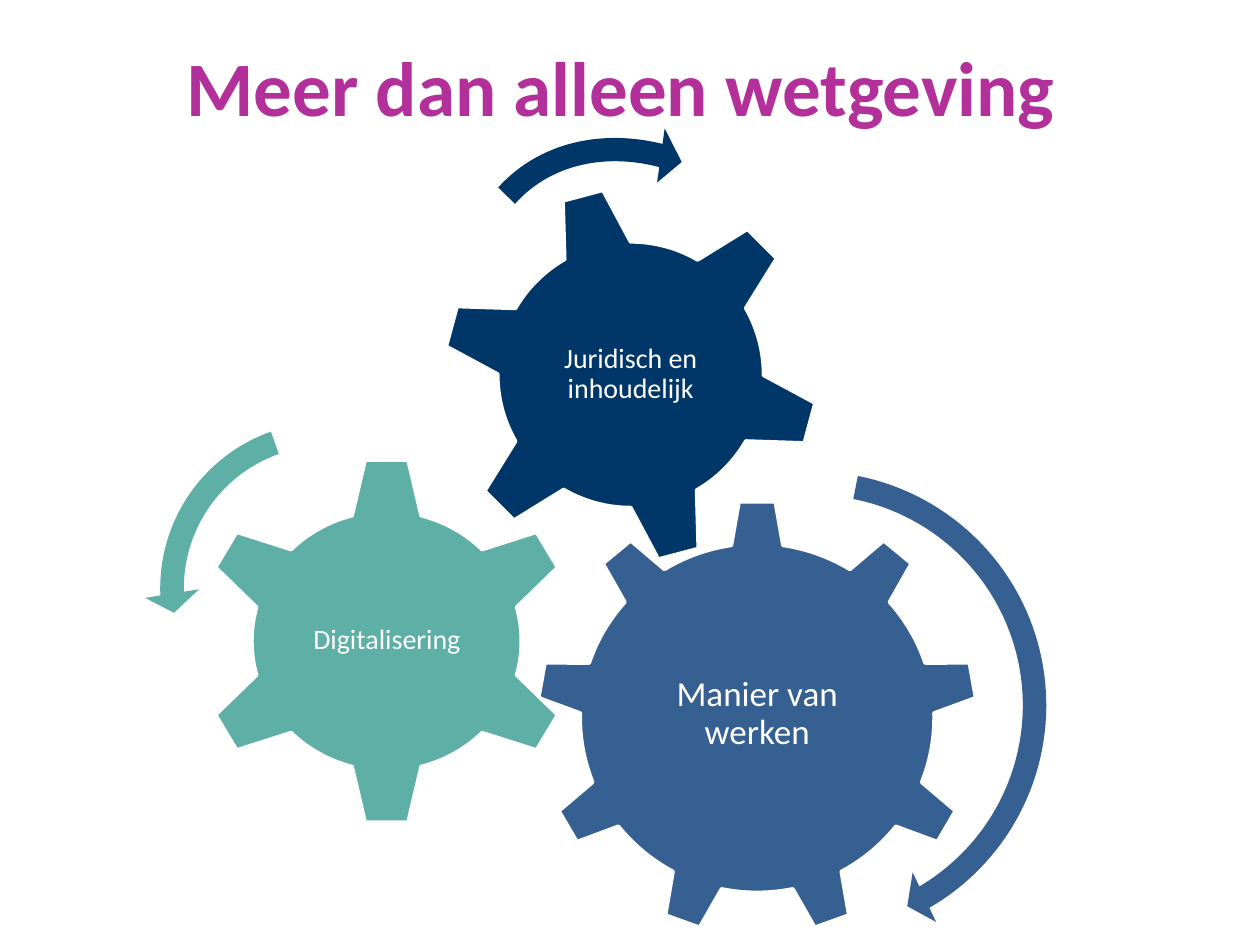
import dataclasses

import pptx
import pptx.dml.color
import pptx.enum.shapes
import pptx.enum.text
import pptx.util

Cm = pptx.util.Cm
Pt = pptx.util.Pt
PRESETS = pptx.enum.shapes.MSO_SHAPE
FONT = "Calibri"
COLOURS = {
    "title": "B32F9A",
    "blue": "376092",
    "teal": "5EAFA6",
    "navy": "003768",
    "white": "FFFFFF",
}


@dataclasses.dataclass
class Gear:
    """Boxes are (left, top, width, height) in cm; label and arrow boxes start at the gear's corner."""
    text: str
    colour: str
    preset: int
    box: tuple
    rotation: float
    label_box: tuple
    font_size: int
    label_margin: float
    arrow_preset: int
    arrow_box: tuple
    arrow_rotation: float
    arrow_adjustments: tuple


GEARS = [
    Gear("Manier van werken", "blue", PRESETS.GEAR_9, (10.82, 10.08, 8.89, 8.79), 0,
         (1.78, 2.06, 5.33, 4.52), 20, 0.07,
         PRESETS.CIRCULAR_ARROW, (0.53, -0.89, 10.06, 10.06), 17.5,
         (0.047, 2.99, 25.349, 158.214, 0.055)),
    Gear("Digitalisering", "teal", PRESETS.GEAR_6, (3.96, 9.19, 7.67, 7.47), 0,
         (1.91, 1.88, 3.86, 3.68), 16, 0.05,
         PRESETS.LEFT_CIRCULAR_ARROW, (-1.04, -0.99, 7.32, 7.32), 3.2,
         (0.065, 4.3, 104.891, 148.378, 0.075)),
    Gear("Juridisch en inhoudelijk", "navy", PRESETS.GEAR_6, (8.89, 3.73, 7.65, 7.65), 345.1,
         (1.68, 1.68, 4.29, 4.29), 16, 0.05,
         PRESETS.CIRCULAR_ARROW, (-0.46, -0.74, 9.6, 7.87), 49.5,
         (0.06, 3.941, 133.138, 105.082, 0.07)),
]


def colour(name):
    return pptx.dml.color.RGBColor.from_string(COLOURS[name])


def place_within(box, inner):
    """Turn a box measured from another box's corner into slide lengths."""
    left, top, width, height = inner
    return [Cm(length) for length in (box[0] + left, box[1] + top, width, height)]


def write_text(text_frame, text, size, colour_name, bold=False):
    text_frame.word_wrap = True
    text_frame.vertical_anchor = pptx.enum.text.MSO_ANCHOR.MIDDLE
    paragraph = text_frame.paragraphs[0]
    paragraph.alignment = pptx.enum.text.PP_ALIGN.CENTER
    run = paragraph.add_run()
    run.text = text
    run.font.name = FONT
    run.font.size = Pt(size)
    run.font.bold = bold
    run.font.color.rgb = colour(colour_name)
    return paragraph


def add_title(slide, box, text):
    title = slide.shapes.title
    title.left, title.top, title.width, title.height = [Cm(length) for length in box]
    write_text(title.text_frame, text, 44, "title", bold=True)


def add_filled_shape(shapes, preset, position, rotation, colour_name):
    shape = shapes.add_shape(preset, *position)
    shape.shadow.inherit = False
    shape.rotation = rotation
    shape.fill.solid()
    shape.fill.fore_color.rgb = colour(colour_name)
    shape.line.fill.background()
    return shape


def add_gear(shapes, gear):
    left, top, width, height = gear.box
    wheel = add_filled_shape(shapes, gear.preset, place_within((left, top), (0, 0, width, height)),
                             gear.rotation, gear.colour)
    wheel.line.color.rgb = colour("white")
    wheel.line.width = Pt(2)

    label = shapes.add_textbox(*place_within(gear.box, gear.label_box))
    frame = label.text_frame
    frame.margin_left = frame.margin_right = Cm(gear.label_margin)
    frame.margin_top = frame.margin_bottom = Cm(gear.label_margin)
    paragraph = write_text(frame, gear.text, gear.font_size, "white")
    paragraph.line_spacing = 0.9


def add_turning_arrow(shapes, gear):
    arrow = add_filled_shape(shapes, gear.arrow_preset, place_within(gear.box, gear.arrow_box),
                             gear.arrow_rotation, gear.colour)
    for index, value in enumerate(gear.arrow_adjustments):
        arrow.adjustments[index] = value


def add_gear_diagram(slide, gears):
    shapes = slide.shapes.add_group_shape().shapes
    for gear in gears:
        add_gear(shapes, gear)
    for gear in gears:
        add_turning_arrow(shapes, gear)


def main():
    presentation = pptx.Presentation()
    presentation.slide_width = Cm(25.4)
    presentation.slide_height = Cm(19.05)
    slide = presentation.slides.add_slide(presentation.slide_layouts.get_by_name("Title Only"))
    add_title(slide, (1.09, 0.13, 22.86, 3.18), "Meer dan alleen wetgeving")
    add_gear_diagram(slide, GEARS)
    presentation.save("out.pptx")


if __name__ == "__main__":
    main()
